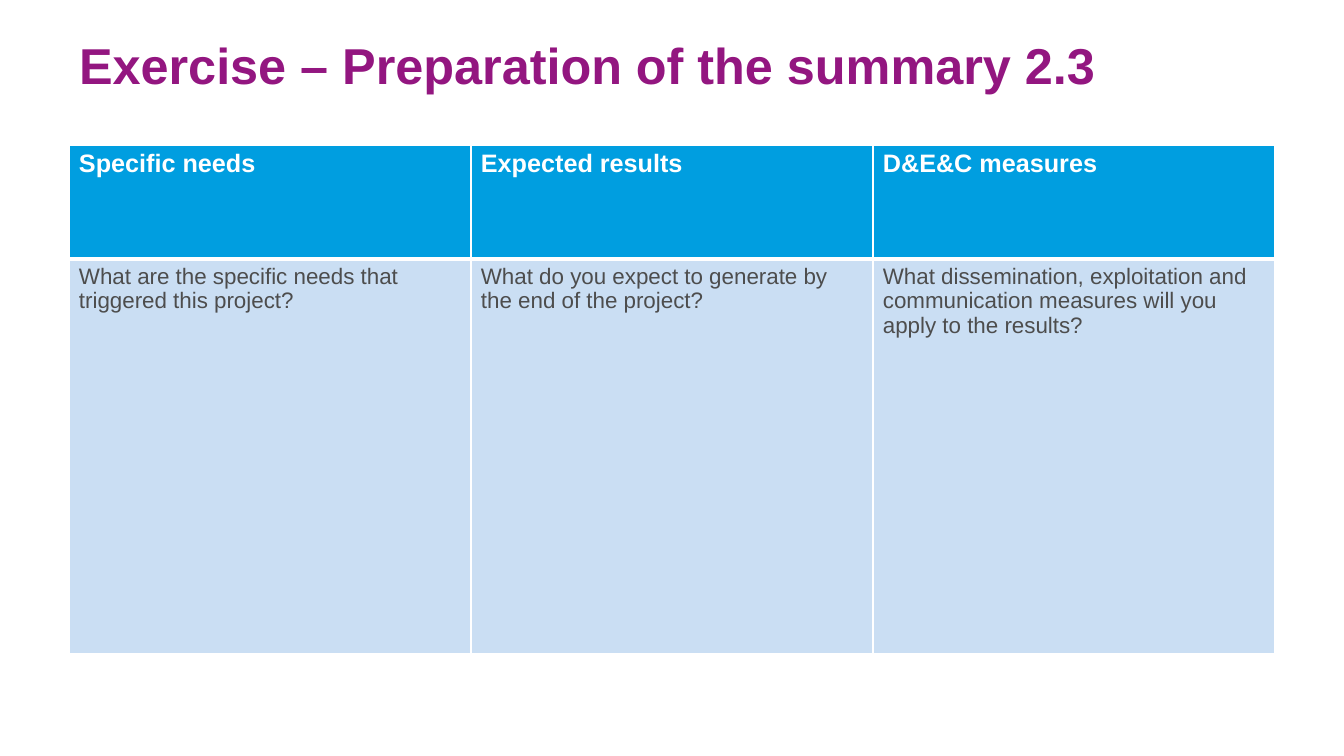
import pptx
import pptx.util
import pptx.dml.color
import pptx.enum.text
from lxml import etree
from pptx.oxml.ns import qn

TITLE = "Exercise – Preparation of the summary 2.3"
COLUMNS = [
    ("Specific needs", "What are the specific needs that triggered this project?"),
    ("Expected results", "What do you expect to generate by the end of the project?"),
    ("D&E&C measures", "What dissemination, exploitation and communication "
                       "measures will you apply to the results?"),
]
THEME = {
    "font": "Arial",
    "title": {"size": 36, "color": "931680", "bold": True},
    "rows": [
        {"size": 18, "color": "FFFFFF", "bold": True, "fill": "009EE0", "bottom": 3},
        {"size": 16, "color": "4D4D4D", "bold": False, "fill": "CADEF3", "bottom": 1},
    ],
    "border": "FFFFFF",
}
SLIDE_W, SLIDE_H = 1344, 756
LEFT, WIDTH = 69, 1206
TITLE_TOP, TITLE_H = 29, 103
TABLE_TOP, ROW_HEIGHTS = 145, (114, 395)


def px(n):
    return pptx.util.Emu(round(n * 914400 / 100.8))


def rgb(value):
    return pptx.dml.color.RGBColor.from_string(value)


def write(tf, text, style):
    p = tf.paragraphs[0]
    p.alignment = pptx.enum.text.PP_ALIGN.LEFT
    r = p.add_run()
    r.text = text
    r.font.name = THEME["font"]
    r.font.size = pptx.util.Pt(style["size"])
    r.font.bold = style["bold"]
    r.font.color.rgb = rgb(style["color"])


def set_borders(cell, top, bottom):
    """Line widths are in points; the sides are always 1 pt."""
    tc_pr = cell._tc.get_or_add_tcPr()
    sides = (("a:lnL", 1), ("a:lnR", 1), ("a:lnT", top), ("a:lnB", bottom))
    for i, (tag, width) in enumerate(sides):
        ln = etree.Element(qn(tag), w=str(pptx.util.Pt(width)))
        fill = etree.SubElement(ln, qn("a:solidFill"))
        etree.SubElement(fill, qn("a:srgbClr"), val=THEME["border"])
        tc_pr.insert(i, ln)


def add_title(s):
    sp = s.shapes.title
    sp.left, sp.top, sp.width, sp.height = map(px, (LEFT, TITLE_TOP, WIDTH, TITLE_H))
    tf = sp.text_frame
    tf.word_wrap = True
    tf.vertical_anchor = pptx.enum.text.MSO_ANCHOR.TOP
    tf.margin_left = tf.margin_right = px(10)
    tf.margin_top, tf.margin_bottom = px(5), 0
    write(tf, TITLE, THEME["title"])


def add_summary_table(s):
    table = s.shapes.add_table(len(ROW_HEIGHTS), len(COLUMNS), px(LEFT), px(TABLE_TOP),
                               px(WIDTH), px(sum(ROW_HEIGHTS))).table
    for column in table.columns:
        column.width = px(WIDTH // len(COLUMNS))
    top = 1
    for i, (height, style) in enumerate(zip(ROW_HEIGHTS, THEME["rows"])):
        table.rows[i].height = px(height)
        for j, texts in enumerate(COLUMNS):
            cell = table.cell(i, j)
            cell.margin_left = cell.margin_right = px(10)
            cell.margin_top = cell.margin_bottom = px(5)
            cell.fill.solid()
            cell.fill.fore_color.rgb = rgb(style["fill"])
            set_borders(cell, top, style["bottom"])
            write(cell.text_frame, texts[i], style)
        top = style["bottom"]


def main():
    prs = pptx.Presentation()
    prs.slide_width, prs.slide_height = px(SLIDE_W), px(SLIDE_H)
    s = prs.slides.add_slide(prs.slide_layouts[5])
    add_title(s)
    add_summary_table(s)
    prs.save("out.pptx")


if __name__ == "__main__":
    main()
